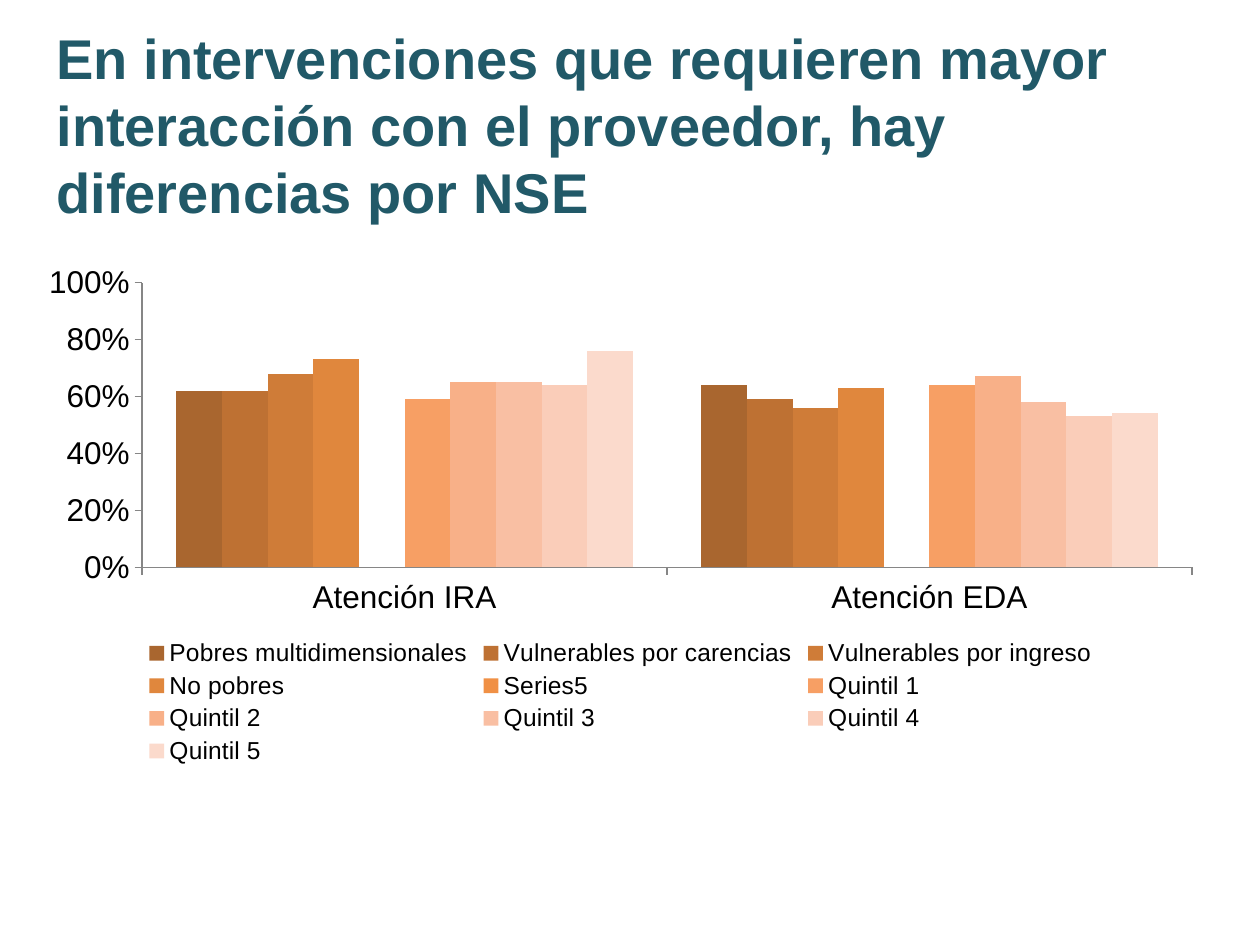
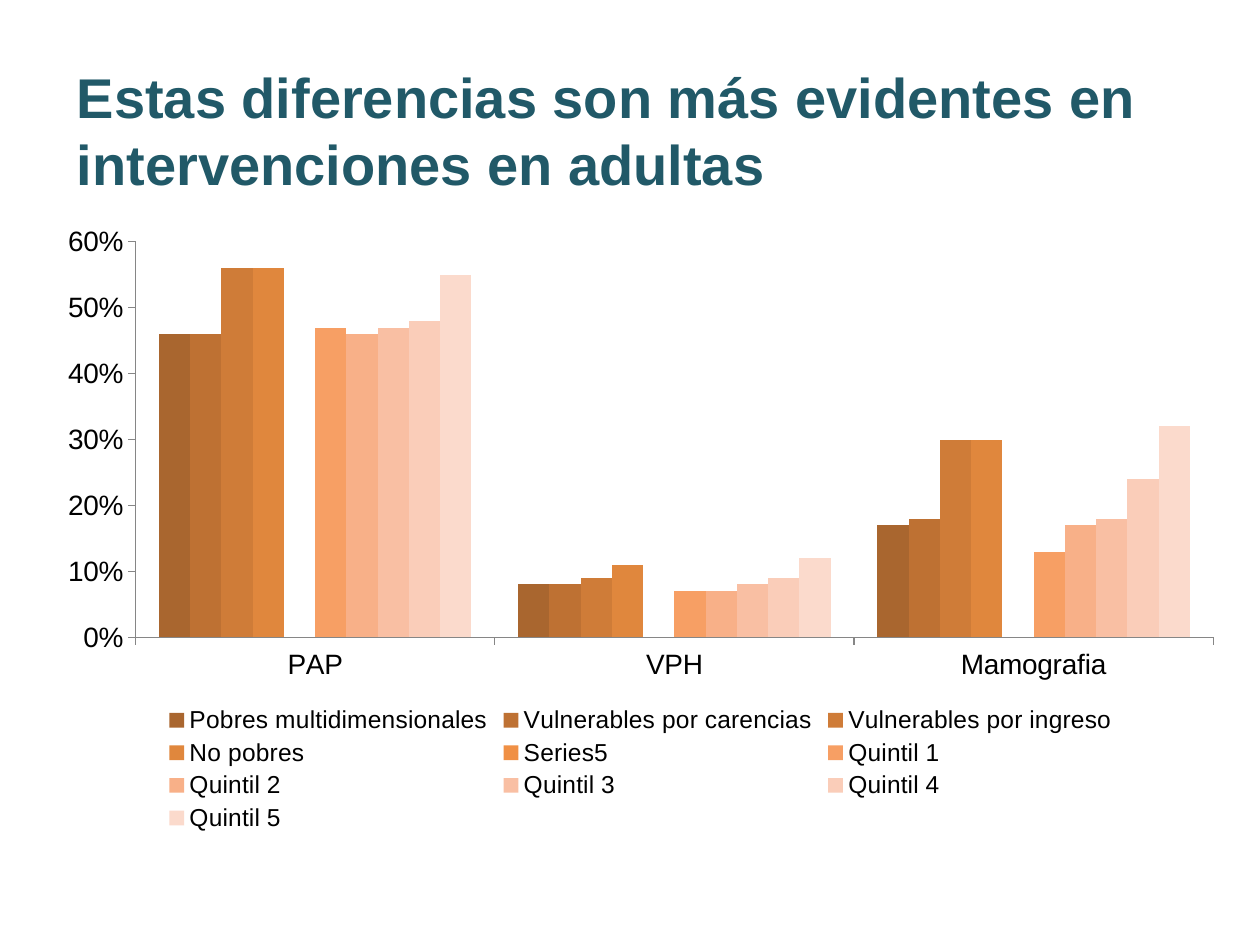
from dataclasses import dataclass
from typing import Optional

from pptx import Presentation
from pptx.chart.data import CategoryChartData as ChartData
from pptx.dml.color import RGBColor as Rgb
from pptx.enum.chart import XL_CHART_TYPE as Kind, XL_LEGEND_POSITION as Side
from pptx.enum.chart import XL_TICK_MARK as Tick
from pptx.enum.text import MSO_ANCHOR as Anchor
from pptx.util import Cm, Pt

FONT = "Arial"
COLORS = {"title": "215968", "text": "000000", "axis": "868686"}

# Groups shown on both slides, each with its bar colour
GROUPS = {
    "Pobres multidimensionales": "A9662F",
    "Vulnerables por carencias": "BE7133",
    "Vulnerables por ingreso": "CF7C38",
    "No pobres": "E0873D",
    "Series5": "F09045",
    "Quintil 1": "F79F64",
    "Quintil 2": "F8B088",
    "Quintil 3": "F9BFA3",
    "Quintil 4": "FACDB9",
    "Quintil 5": "FBDACC",
}


@dataclass
class Box:
    left: float
    top: float
    width: float
    height: float

    def place(self) -> tuple:
        return Cm(self.left), Cm(self.top), Cm(self.width), Cm(self.height)


@dataclass
class Page:
    title: str
    head: Box
    plot: Box
    rates: dict[str, list[Optional[float]]]  # one value per group
    top: float
    step: float
    size: int  # axis label size


PAGES = [
    Page(
        "En intervenciones que requieren mayor interacción con el proveedor, "
        "hay diferencias por NSE",
        Box(0.89, 0.91, 22.86, 3.18),
        Box(0.51, 5.13, 24, 10.39),
        {
            "Atención IRA": [0.62, 0.62, 0.68, 0.73, None,
                             0.59, 0.65, 0.65, 0.64, 0.76],
            "Atención EDA": [0.64, 0.59, 0.56, 0.63, None,
                             0.64, 0.67, 0.58, 0.53, 0.54],
        },
        top=1, step=0.2, size=18,
    ),
    Page(
        "Estas diferencias son más evidentes en intervenciones en adultas",
        Box(1.3, 1.02, 22.86, 3.18),
        Box(0.89, 4.32, 24.05, 12.55),
        {
            "PAP": [0.46, 0.46, 0.56, 0.56, None,
                    0.47, 0.46, 0.47, 0.48, 0.55],
            "VPH": [0.08, 0.08, 0.09, 0.11, None,
                    0.07, 0.07, 0.08, 0.09, 0.12],
            "Mamografia": [0.17, 0.18, 0.3, 0.3, None,
                           0.13, 0.17, 0.18, 0.24, 0.32],
        },
        top=0.6, step=0.1, size=16,
    ),
]


def style(font, size: int, color: str) -> None:
    font.name = FONT
    font.size = Pt(size)
    font.color.rgb = Rgb.from_string(COLORS[color])


def add_title(slide, page: Page) -> None:
    frame = slide.shapes.add_textbox(*page.head.place()).text_frame
    frame.word_wrap = True
    frame.vertical_anchor = Anchor.MIDDLE
    run = frame.paragraphs[0].add_run()
    run.text = page.title
    style(run.font, 32, "title")
    run.font.bold = True


def set_axis(axis, size: int) -> None:
    axis.has_major_gridlines = False
    axis.major_tick_mark = Tick.OUTSIDE
    axis.minor_tick_mark = Tick.NONE
    axis.format.line.color.rgb = Rgb.from_string(COLORS["axis"])
    axis.format.line.width = Pt(0.75)
    style(axis.tick_labels.font, size, "text")


def add_bars(slide, page: Page) -> None:
    data = ChartData(number_format="0%")
    data.categories = list(page.rates)
    for name, vals in zip(GROUPS, zip(*page.rates.values())):
        data.add_series(name, vals)
    chart = slide.shapes.add_chart(
        Kind.COLUMN_CLUSTERED, *page.plot.place(), data).chart
    chart.has_title = False
    style(chart.font, 16, "text")

    # Bars
    plot = chart.plots[0]
    plot.vary_by_categories = False
    plot.gap_width = 150
    plot.overlap = 0
    for bars, color in zip(plot.series, GROUPS.values()):
        bars.invert_if_negative = False
        bars.format.fill.solid()
        bars.format.fill.fore_color.rgb = Rgb.from_string(color)

    # Axes
    for axis in (chart.category_axis, chart.value_axis):
        set_axis(axis, page.size)
    scale = chart.value_axis
    scale.minimum_scale = 0
    scale.maximum_scale = page.top
    scale.major_unit = page.step
    scale.tick_labels.number_format = "0%"
    scale.tick_labels.number_format_is_linked = False

    # Legend
    chart.has_legend = True
    chart.legend.position = Side.BOTTOM
    chart.legend.include_in_layout = False
    style(chart.legend.font, 14, "text")


def main() -> None:
    deck = Presentation()
    deck.slide_width, deck.slide_height = Cm(25.4), Cm(19.05)
    blank = deck.slide_layouts[6]
    for page in PAGES:
        slide = deck.slides.add_slide(blank)
        add_title(slide, page)
        add_bars(slide, page)
    deck.save("out.pptx")


if __name__ == "__main__":
    main()
